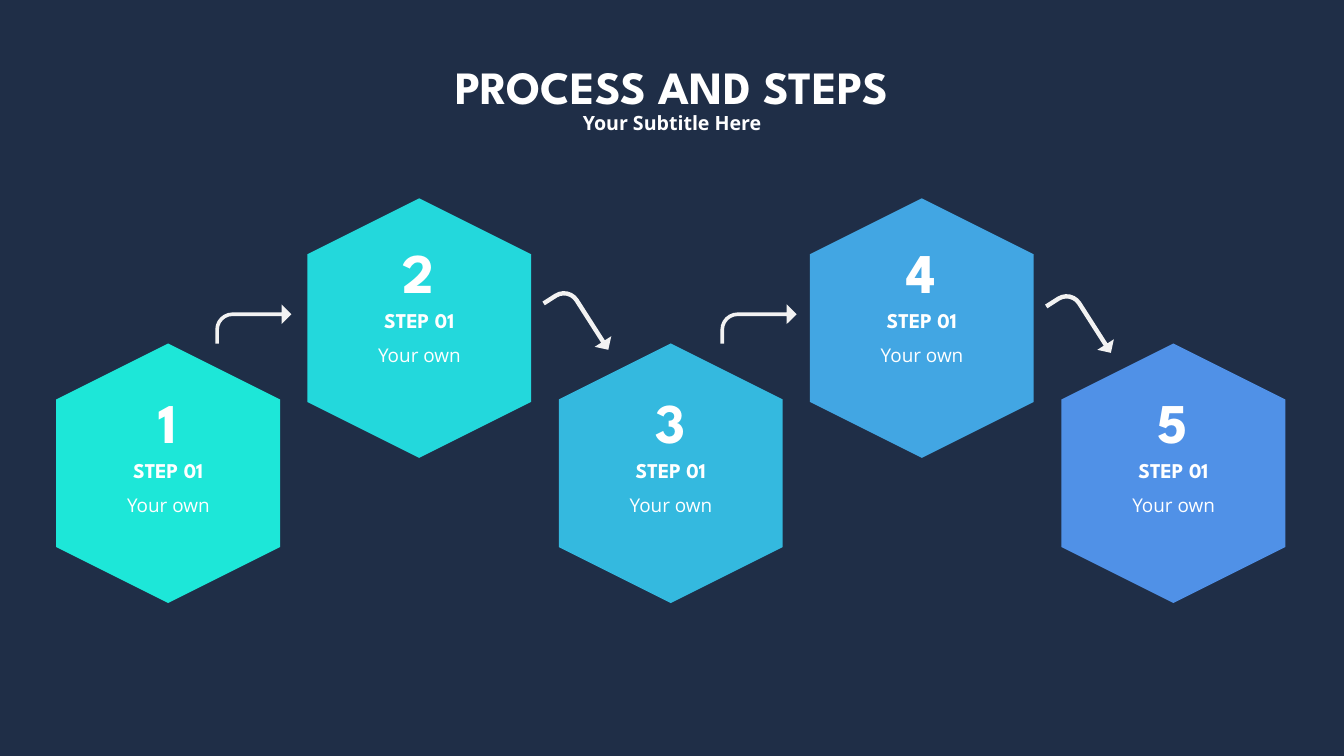
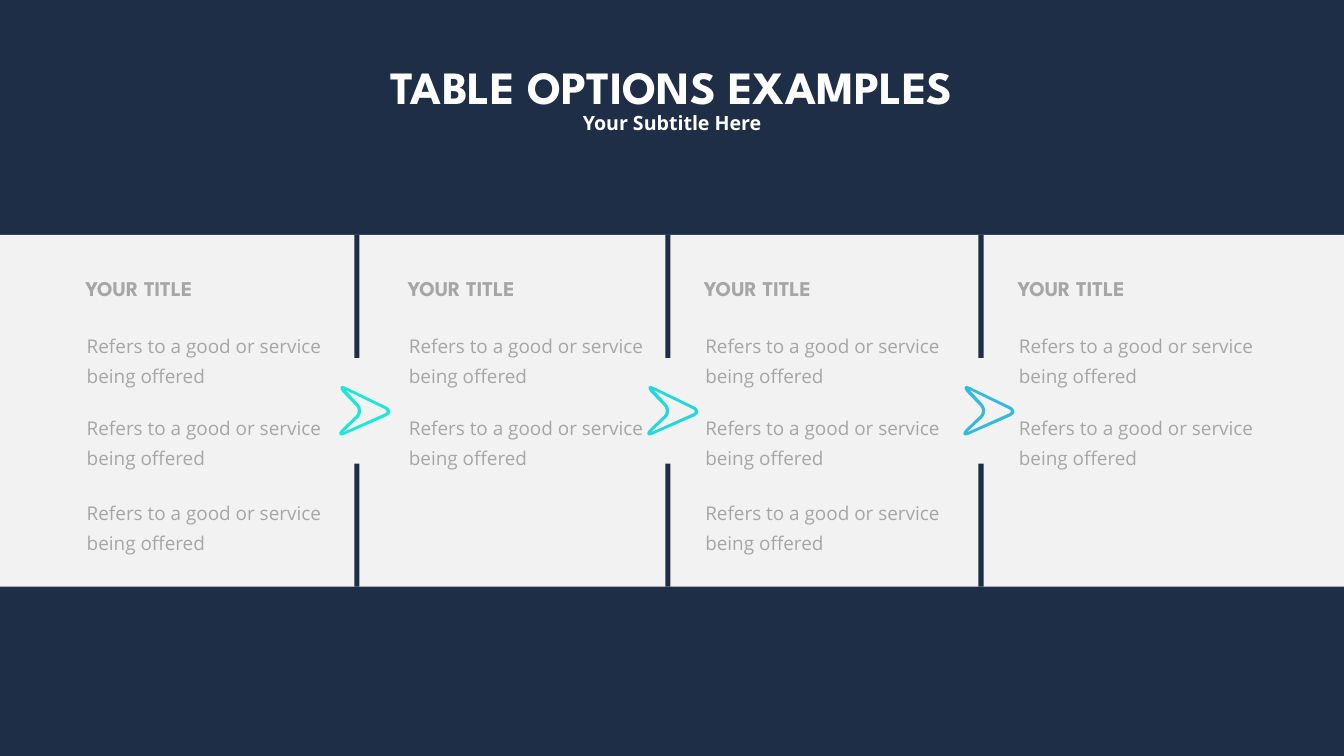
"""Builds two dark slides: a five-step process and a four-column table."""
from math import cos, radians, sin

from pptx import Presentation
from pptx.dml.color import RGBColor
from pptx.enum.shapes import MSO_SHAPE as Preset
from pptx.enum.text import MSO_ANCHOR as Anchor, MSO_AUTO_SIZE as AutoSize, PP_ALIGN as Align
from pptx.util import Emu, Pt

EMU_PER_PX = 9144
WIDTH, HEIGHT = 2666, 1500
NAVY, PALE, WHITE, GREY = "1F2E47", "F2F2F2", "FFFFFF", "A6A6A6"
ACCENTS = ["1DE7D8", "23D8DC", "34B9DF", "42A6E3", "5091E7"]
HEADING, BODY = "League Spartan", "Open Sans"

CHEVRON_TILT = 46.2
CHEVRON_OUTER = [
    (71, 3), (71, -2, 68, -7, 63, -9), (-16, -47),
    (-20, -49, -25, -51, -27, -48), (-29, -45, -26, -41, -23, -37),
    (3, -10), (8, -5, 8, 5, 2, 10), (-25, 36),
    (-27, 38, -32, 44, -29, 47), (-27, 49, -24, 49, -18, 46),
    (62, 11), (68, 8, 70, 5, 71, 3),
]
CHEVRON_INNER = [
    (60, 5), (-20, 41), (-21, 40), (7, 14), (15, 6, 15, -7, 7, -15),
    (-18, -42), (60, -4), (63, -2, 65, 0, 64, 1), (64, 3, 62, 4, 60, 5),
]


def px(length):
    """Turn px into EMU."""
    return Emu(round(length * EMU_PER_PX))


def color(value):
    """Turn a hex string into a colour."""
    return RGBColor.from_string(value)


def flatten(contour, steps=8):
    """Turn a contour of line ends and cubic curves into points."""
    points = [contour[0]]
    for segment in contour[1:]:
        if len(segment) == 2:
            points.append(segment)
            continue
        x0, y0 = points[-1]
        x1, y1, x2, y2, x3, y3 = segment
        for step in range(1, steps + 1):
            t = step / steps
            a, b, c, d = (1 - t) ** 3, 3 * t * (1 - t) ** 2, 3 * t * t * (1 - t), t ** 3
            points.append((a * x0 + b * x1 + c * x2 + d * x3,
                           a * y0 + b * y1 + c * y2 + d * y3))
    return points


class Deck:
    """Holds the shared style and the current slide."""

    def __init__(self):
        """Start an empty presentation with the shared background."""
        self.presentation = Presentation()
        self.presentation.slide_width = px(WIDTH)
        self.presentation.slide_height = px(HEIGHT)
        fill = self.presentation.slide_master.background.fill
        fill.solid()
        fill.fore_color.rgb = color(NAVY)
        self.slide = None

    def new_slide(self, title, title_width):
        """Add a slide with its title and subtitle."""
        self.slide = self.presentation.slides.add_slide(self.presentation.slide_layouts[0])
        heading, subtitle = self.slide.placeholders
        self.place(heading, (WIDTH - title_width) // 2, 81, title_width, 150)
        self.set_text(heading, title, 66, HEADING, line=100)
        self.place(subtitle, 1144, 215, 378, 57)
        self.set_text(subtitle, "Your Subtitle Here", 28, BODY, anchor=Anchor.MIDDLE)

    def place(self, shape, left, top, width, height):
        """Move and size a shape."""
        shape.left, shape.top = px(left), px(top)
        shape.width, shape.height = px(width), px(height)

    def set_text(self, shape, text, size, font, ink=WHITE, bold=True, align=Align.CENTER,
                 anchor=Anchor.TOP, line=None, before=0, wrap=False):
        """Put one formatted paragraph into a shape."""
        frame = shape.text_frame
        frame.word_wrap = wrap
        frame.auto_size = AutoSize.SHAPE_TO_FIT_TEXT
        frame.vertical_anchor = anchor
        paragraph = frame.paragraphs[0]
        paragraph.text = text
        paragraph.alignment = align
        paragraph.space_before = Pt(before)
        if line:
            paragraph.line_spacing = Pt(line)
        paragraph.font.name = font
        paragraph.font.size = Pt(size)
        paragraph.font.bold = bold
        paragraph.font.color.rgb = color(ink)
        return frame

    def label(self, box, text, size, **style):
        """Add a heading-font label."""
        shape = self.slide.shapes.add_textbox(*map(px, box))
        self.set_text(shape, text, size, HEADING, **style)

    def body(self, box, text, ink, align):
        """Add a wrapped block of body text."""
        shape = self.slide.shapes.add_textbox(*map(px, box))
        frame = self.set_text(shape, text, 27, BODY, ink=ink, bold=False, align=align,
                              line=43, before=5.4, wrap=True)
        frame.margin_left = frame.margin_right = px(24)
        frame.margin_top = frame.margin_bottom = px(12)

    def paint(self, shape, fill, rotation=0):
        """Give a shape a flat fill and a rotation."""
        shape.shadow.inherit = False
        shape.fill.solid()
        shape.fill.fore_color.rgb = color(fill)
        shape.line.fill.background()
        shape.rotation = rotation
        return shape

    def preset(self, kind, box, fill, rotation=0, adjustments=()):
        """Add a preset shape."""
        shape = self.slide.shapes.add_shape(kind, *map(px, box))
        for index, value in enumerate(adjustments):
            shape.adjustments[index] = value
        return self.paint(shape, fill, rotation)

    def divider(self, left):
        """Add the two grouped bars between columns."""
        bars = [self.preset(Preset.RECTANGLE, (left, top, 10, 244), NAVY) for top in (466, 920)]
        self.slide.shapes.add_group_shape(bars)

    def chevron(self, center_x, center_y, fill):
        """Add a hollow chevron pointing right."""
        cosine, sine = cos(radians(CHEVRON_TILT)), sin(radians(CHEVRON_TILT))
        outer, inner = (
            [(px(center_x + x * cosine + y * sine), px(center_y - x * sine + y * cosine))
             for x, y in flatten(contour)]
            for contour in (CHEVRON_OUTER, CHEVRON_INNER)
        )
        builder = self.slide.shapes.build_freeform(*outer[0])
        builder.add_line_segments(outer[1:])
        builder.move_to(*inner[0])
        builder.add_line_segments(inner[1:])
        self.paint(builder.convert_to_shape(), fill, CHEVRON_TILT)


def add_process(deck):
    """Build the five-step process slide."""
    deck.new_slide("PROCESS AND STEPS", 1040)
    for index, accent in enumerate(ACCENTS):
        left = 76 + index * 997 // 2
        hexagon_top, text_top = (429, 461) if index % 2 else (717, 758)
        deck.preset(Preset.HEXAGON, (left, hexagon_top, 515, 444), accent, 90)
        deck.label((left + 165, text_top + 144, 185, 61), "STEP 01", 30, anchor=Anchor.MIDDLE)
        deck.label((left + 207, text_top, 100, 150), str(index + 1), 80, line=100)
        deck.body((left + 77, text_top + 194, 362, 79), "Your own", WHITE, Align.CENTER)
    for left, top, rotation, thickness in [(427, 604, 0, 0.093), (1074, 602, 57.4, 0.112),
                                           (1429, 604, 0, 0.093), (2071, 608, 57.4, 0.112)]:
        deck.preset(Preset.BENT_ARROW, (left, top, 151, 78), PALE, rotation,
                    (thickness, 0.25, 0.25, 0.438))


def add_table_options(deck):
    """Build the four-column options slide."""
    deck.new_slide("TABLE OPTIONS EXAMPLES", 1330)
    deck.preset(Preset.RECTANGLE, (0, 466, WIDTH, 698), PALE)
    for divider_left, chevron_x, accent in zip((703, 1320, 1941), (703, 1314, 1941), ACCENTS):
        deck.divider(divider_left)
        deck.chevron(chevron_x, 815, accent)
    for left, entries in [(148, 3), (787, 2), (1375, 3), (1997, 2)]:
        deck.label((left + 12, 541, 272, 61), "YOUR TITLE", 30, ink=GREY,
                   align=Align.LEFT, anchor=Anchor.MIDDLE)
        for top in (637, 800, 969)[:entries]:
            deck.body((left, top, 515, 145), "Refers to a good or service being offered",
                      GREY, Align.LEFT)


def main():
    """Build and save the slides."""
    deck = Deck()
    add_process(deck)
    add_table_options(deck)
    deck.presentation.save("out.pptx")


if __name__ == "__main__":
    main()
